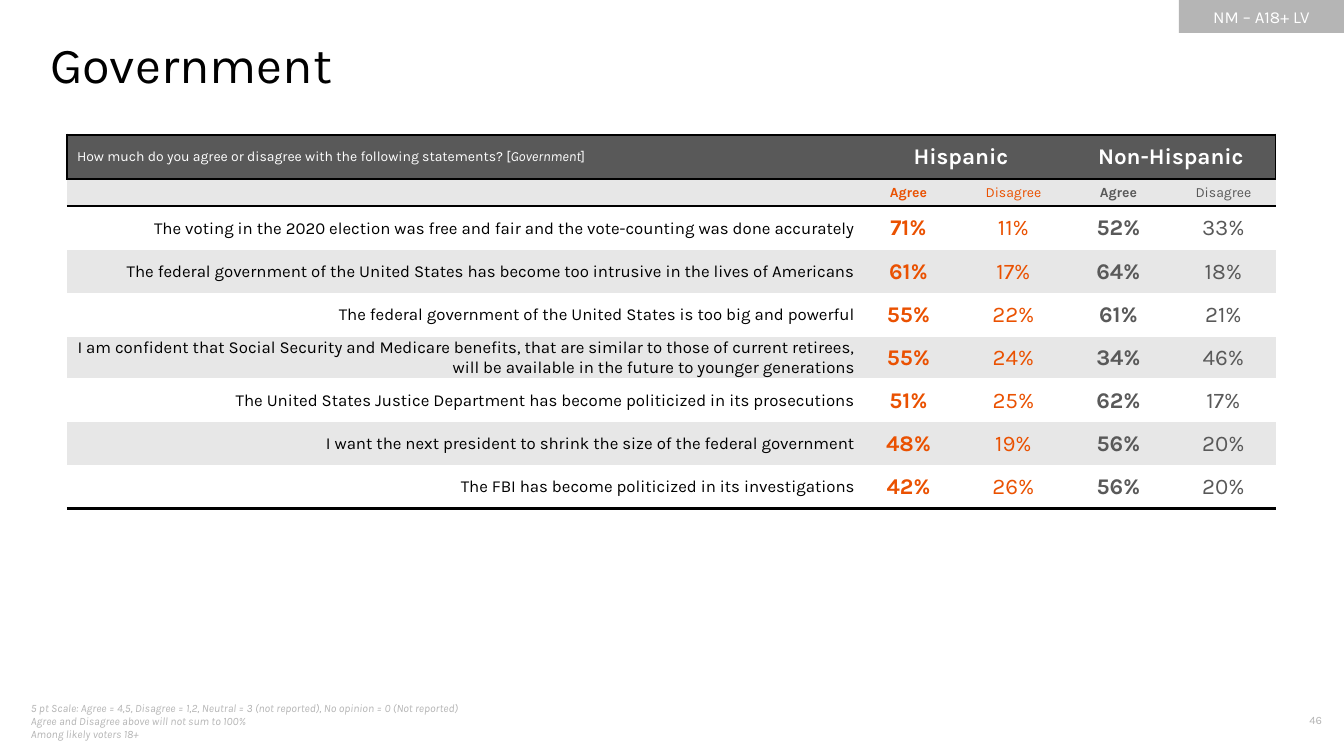
"""Build the Government poll slide: agreement by Hispanic and non-Hispanic voters."""
import pptx
import pptx.dml.color
import pptx.enum.shapes
import pptx.enum.text
import pptx.oxml.ns
import pptx.util
from lxml import etree

PX = 9071
FONT = "Karla"
BLACK = pptx.dml.color.RGBColor(0x00, 0x00, 0x00)
WHITE = pptx.dml.color.RGBColor(0xFF, 0xFF, 0xFF)
ORANGE = pptx.dml.color.RGBColor(0xEA, 0x51, 0x01)
CHARCOAL = pptx.dml.color.RGBColor(0x59, 0x59, 0x59)
BAND = pptx.dml.color.RGBColor(0xE7, 0xE7, 0xE7)
MUTED = pptx.dml.color.RGBColor(0xB5, 0xB5, 0xB5)
LEFT = pptx.enum.text.PP_ALIGN.LEFT
CENTER = pptx.enum.text.PP_ALIGN.CENTER
RIGHT = pptx.enum.text.PP_ALIGN.RIGHT
MIDDLE = pptx.enum.text.MSO_ANCHOR.MIDDLE
NO_GRID = "{2D5ABB26-0587-4C30-8999-92F81FD0307C}"


def write(paragraph, text, size, color, align=LEFT, bold=False, italic=False):
    paragraph.alignment = align
    run = paragraph.add_run()
    run.text = text
    run.font.name = FONT
    run.font.size = pptx.util.Pt(size)
    run.font.color.rgb = color
    run.font.bold = bold
    run.font.italic = italic


def rule(cell, edges):
    properties = cell._tc.get_or_add_tcPr()
    for position, (edge, points) in enumerate(edges):
        line = etree.Element(pptx.oxml.ns.qn(f"a:ln{edge}"), w=str(pptx.util.Pt(points)))
        fill = etree.SubElement(line, pptx.oxml.ns.qn("a:solidFill"))
        etree.SubElement(fill, pptx.oxml.ns.qn("a:srgbClr"), val=str(BLACK))
        properties.insert(position, line)


presentation = pptx.Presentation()
presentation.slide_width = 1344 * PX
presentation.slide_height = 756 * PX
slide = presentation.slides.add_slide(presentation.slide_layouts[5])

heading = slide.shapes.title
heading.left, heading.top, heading.width, heading.height = 50 * PX, 33 * PX, 1210 * PX, 62 * PX
heading_frame = heading.text_frame
heading_frame.auto_size = pptx.enum.text.MSO_AUTO_SIZE.NONE
heading_frame.vertical_anchor = pptx.enum.text.MSO_ANCHOR.TOP
heading_frame.margin_left = heading_frame.margin_right = 0
heading_frame.margin_top = heading_frame.margin_bottom = 0
write(heading_frame.paragraphs[0], "Government", 36, BLACK)

sample_tag = slide.shapes.add_shape(
    pptx.enum.shapes.MSO_SHAPE.RECTANGLE, 1179 * PX, 0, 165 * PX, 33 * PX)
sample_tag.shadow.inherit = False
sample_tag.fill.solid()
sample_tag.fill.fore_color.rgb = MUTED
sample_tag.line.fill.background()
sample_tag.text_frame.vertical_anchor = MIDDLE
write(sample_tag.text_frame.paragraphs[0], "NM – A18+ LV", 12, WHITE, CENTER)

footnotes = [
    "5 pt Scale: Agree = 4,5, Disagree = 1,2, Neutral = 3 (not reported), No opinion = 0 (Not reported)",
    "Agree and Disagree above will not sum to 100%",
    "Among likely voters 18+",
]
footnote_frame = slide.shapes.add_textbox(21 * PX, 701 * PX, 515 * PX, 40 * PX).text_frame
footnote_frame.word_wrap = True
footnote_frame.vertical_anchor = MIDDLE
for index, footnote in enumerate(footnotes):
    paragraph = footnote_frame.add_paragraph() if index else footnote_frame.paragraphs[0]
    write(paragraph, footnote, 8, MUTED, italic=True)

page_frame = slide.shapes.add_textbox(1243 * PX, 708 * PX, 89 * PX, 27 * PX).text_frame
page_frame.word_wrap = True
write(page_frame.paragraphs[0], "46", 8, MUTED, RIGHT)

statements = [
    ("The voting in the 2020 election was free and fair and the vote-counting was done accurately",
     71, 11, 52, 33),
    ("The federal government of the United States has become too intrusive in the lives of Americans",
     61, 17, 64, 18),
    ("The federal government of the United States is too big and powerful", 55, 22, 61, 21),
    ("I am confident that Social Security and Medicare benefits, that are similar to those of "
     "current retirees, will be available in the future to younger generations", 55, 24, 34, 46),
    ("The United States Justice Department has become politicized in its prosecutions",
     51, 25, 62, 17),
    ("I want the next president to shrink the size of the federal government", 48, 19, 56, 20),
    ("The FBI has become politicized in its investigations", 42, 26, 56, 20),
]
column_widths = [789] + [105] * 4
row_heights = [44, 26, 44, 43, 44, 40, 44, 43, 43]
answer_styles = [(ORANGE, True), (ORANGE, False), (CHARCOAL, True), (CHARCOAL, False)]

poll_frame = slide.shapes.add_table(
    len(row_heights), len(column_widths), 67 * PX, 135 * PX,
    sum(column_widths) * PX, sum(row_heights) * PX)
poll = poll_frame.table
poll.first_row = False
poll.horz_banding = False
poll._tbl.tblPr.find(pptx.oxml.ns.qn("a:tableStyleId")).text = NO_GRID
for column, width in zip(poll.columns, column_widths):
    column.width = width * PX
for row, height in zip(poll.rows, row_heights):
    row.height = height * PX

for row_index, row in enumerate(poll.rows):
    for cell in row.cells:
        cell.vertical_anchor = MIDDLE
        cell.fill.solid()
        cell.fill.fore_color.rgb = CHARCOAL if row_index == 0 else BAND if row_index % 2 else WHITE
        if row_index > 1:
            cell.margin_left = cell.margin_right = cell.margin_top = PX
            cell.margin_bottom = 0

question = poll.cell(0, 0).text_frame.paragraphs[0]
write(question, "How much do you agree or disagree with the following statements? [", 10, WHITE)
write(question, "Government", 10, WHITE, italic=True)
write(question, "]", 10, WHITE)
for column_index, group in ((1, "Hispanic"), (3, "Non-Hispanic")):
    group_cell = poll.cell(0, column_index)
    group_cell.merge(poll.cell(0, column_index + 1))
    write(group_cell.text_frame.paragraphs[0], group, 16, WHITE, CENTER, bold=True)

blank = poll.cell(1, 0).text_frame.paragraphs[0]
etree.SubElement(blank._p, pptx.oxml.ns.qn("a:endParaRPr"), sz="1000")
for column_index, (color, bold) in enumerate(answer_styles, 1):
    answer = "Agree" if bold else "Disagree"
    write(poll.cell(1, column_index).text_frame.paragraphs[0], answer, 10, color, CENTER, bold)

for row_index, (statement, *shares) in enumerate(statements, 2):
    write(poll.cell(row_index, 0).text_frame.paragraphs[0], statement, 12, BLACK, RIGHT)
    for column_index, (share, (color, bold)) in enumerate(zip(shares, answer_styles), 1):
        paragraph = poll.cell(row_index, column_index).text_frame.paragraphs[0]
        write(paragraph, f"{share}%", 16, color, CENTER, bold)

header_sides = {0: [("L", 1)], 3: [("R", 1)], 4: [("R", 1)]}
for column_index in range(len(column_widths)):
    sides = header_sides.get(column_index, [])
    rule(poll.cell(0, column_index), sides + [("T", 2.25), ("B", 2.25)])
    rule(poll.cell(1, column_index), [("T", 2.25)])
    rule(poll.cell(len(row_heights) - 1, column_index), [("B", 2.25)])

presentation.save("out.pptx")
